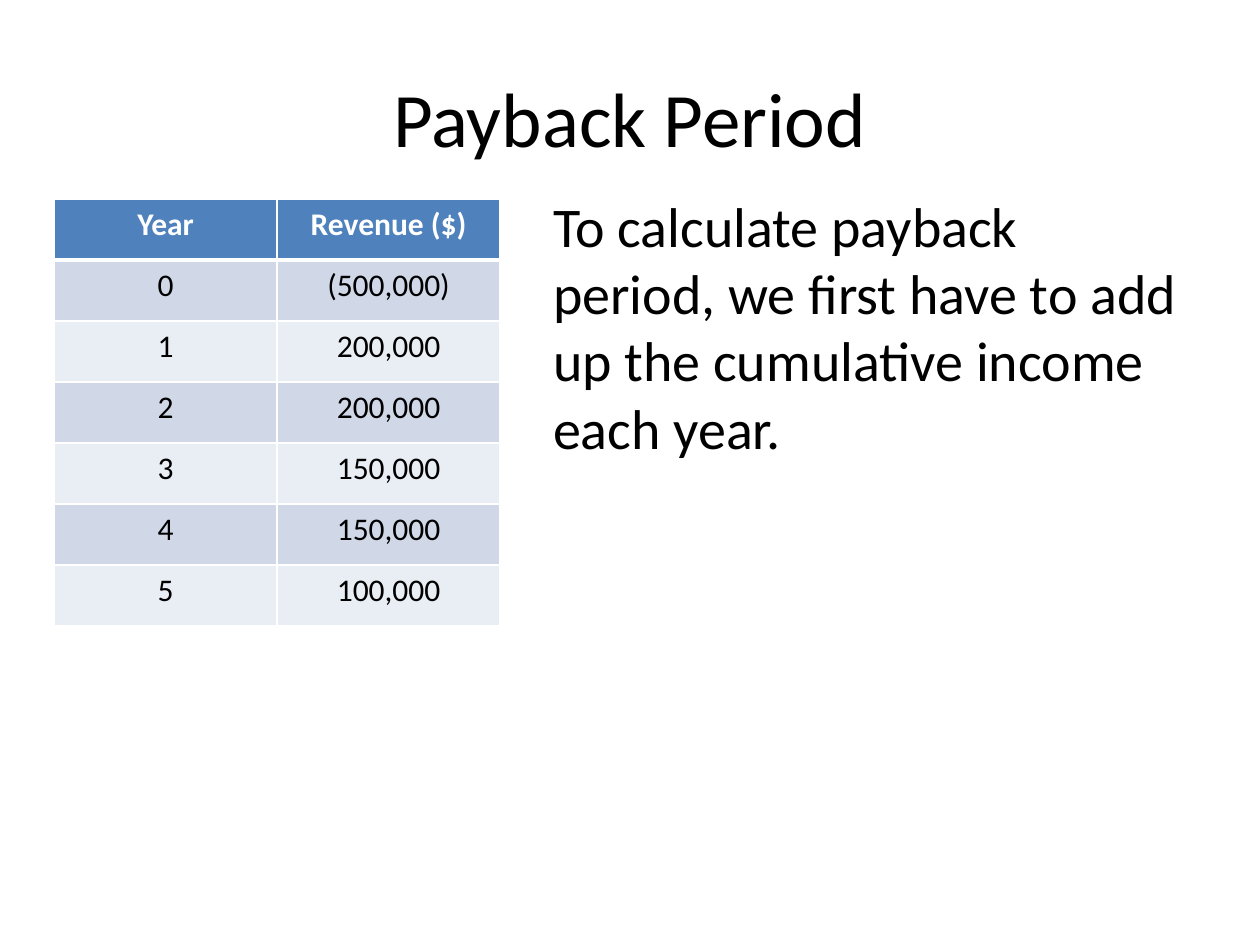
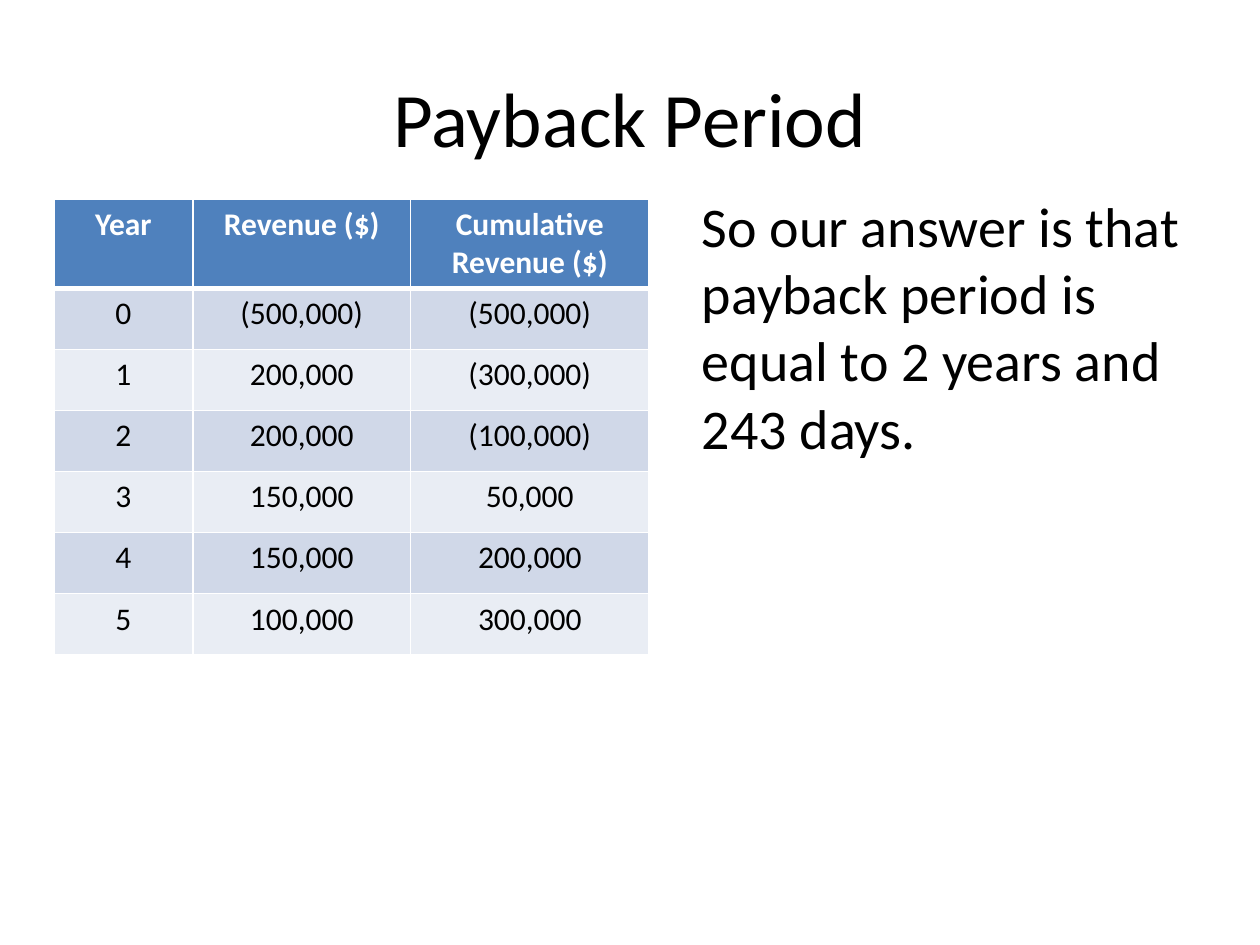
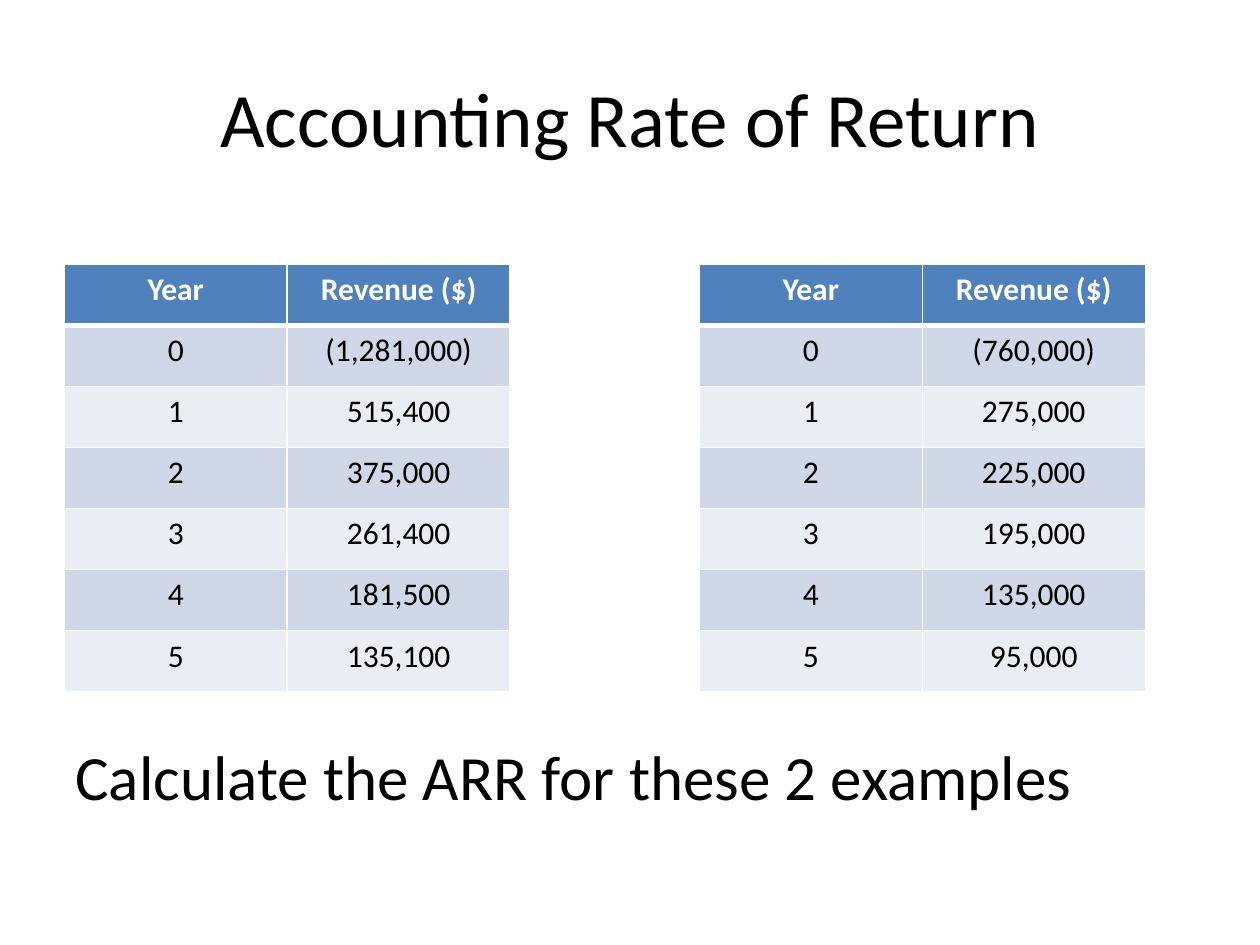
from itertools import accumulate

from lxml.etree import SubElement
from pptx import Presentation
from pptx.dml.color import RGBColor
from pptx.enum.text import MSO_ANCHOR, MSO_AUTO_SIZE, PP_ALIGN
from pptx.oxml.ns import qn
from pptx.util import Inches, Pt

FONT = "Calibri"
COLORS = {
    "text": "000000",
    "white": "FFFFFF",
    "header": "4F81BD",
    "odd_band": "D0D8E8",
    "even_band": "E9EDF4",
}
TITLE_ONLY, TITLE_AND_BODY = 5, 1
ROW_HEIGHT = Inches(3.39) // 7
EQUAL_COLUMNS = (1.77, 1.77)


def accounting(amount):
    """Thousands separators, with negative amounts in parentheses."""
    return f"({-amount:,})" if amount < 0 else f"{amount:,}"


class Deck:
    def __init__(self):
        self.presentation = Presentation()
        self.presentation.slide_width = Inches(10)
        self.presentation.slide_height = Inches(7.5)
        self.slide = None

    def add_slide(self, heading, layout):
        self.slide = self.presentation.slides.add_slide(
            self.presentation.slide_layouts[layout])
        title = self.slide.shapes.title
        self.place(title, 0.5, 0.3, 9, 1.25)
        title.text_frame.text = heading
        title.text_frame.vertical_anchor = MSO_ANCHOR.MIDDLE
        self.format_text(title.text_frame, 44, align=PP_ALIGN.CENTER)

    def place(self, shape, left, top, width, height):
        shape.left, shape.top = Inches(left), Inches(top)
        shape.width, shape.height = Inches(width), Inches(height)

    def format_text(self, frame, size, color="text", bold=False, align=None):
        for paragraph in frame.paragraphs:
            paragraph.alignment = align
            for run in paragraph.runs:
                run.font.name = FONT
                run.font.size = Pt(size)
                run.font.bold = bold
                run.font.color.rgb = RGBColor.from_string(COLORS[color])

    def add_body(self, explanation, left, width):
        body = self.slide.placeholders[1]
        self.place(body, left, 1.47, width, 5.23)
        body.text_frame.text = explanation
        self.format_text(body.text_frame, 32)
        # Plain paragraph: no bullet and no hanging indent
        properties = body.text_frame.paragraphs[0]._p.get_or_add_pPr()
        properties.set("marL", "0")
        properties.set("indent", "0")
        SubElement(properties, qn("a:buNone"))

    def add_note(self, task, left, top, width, height):
        note = self.slide.shapes.add_textbox(
            Inches(left), Inches(top), Inches(width), Inches(height))
        note.text_frame.word_wrap = True
        note.text_frame.auto_size = MSO_AUTO_SIZE.SHAPE_TO_FIT_TEXT
        note.text_frame.text = task
        self.format_text(note.text_frame, 36)

    def add_revenue_table(self, left, top, revenues, widths=EQUAL_COLUMNS,
                          cumulative=False):
        columns = [["Year", *map(str, range(len(revenues)))],
                   ["Revenue ($)", *map(accounting, revenues)]]
        if cumulative:
            columns.append(["Cumulative Revenue ($)",
                            *map(accounting, accumulate(revenues))])
        rows = list(zip(*columns))
        table = self.slide.shapes.add_table(
            len(rows), len(columns), Inches(left), Inches(top),
            Inches(sum(widths)), ROW_HEIGHT * len(rows)).table
        for column, width in zip(table.columns, widths):
            column.width = Inches(width)
        for row_index, row in enumerate(rows):
            table.rows[row_index].height = ROW_HEIGHT
            for column_index, value in enumerate(row):
                self.fill_cell(table.cell(row_index, column_index), value, row_index)

    def fill_cell(self, cell, value, row_index):
        is_header = row_index == 0
        band = "odd_band" if row_index % 2 else "even_band"
        cell.text_frame.text = value
        self.format_text(cell.text_frame, 18, "white" if is_header else "text",
                         is_header, PP_ALIGN.CENTER)
        cell.fill.solid()
        cell.fill.fore_color.rgb = RGBColor.from_string(
            COLORS["header" if is_header else band])
        # The rule below the header is thicker than the other borders
        widths = {"lnL": 1, "lnR": 1, "lnT": 3 if row_index == 1 else 1,
                  "lnB": 3 if is_header else 1}
        properties = cell._tc.get_or_add_tcPr()
        for position, (side, width) in enumerate(widths.items()):
            border = SubElement(properties, qn(f"a:{side}"), w=str(Pt(width)))
            fill = SubElement(border, qn("a:solidFill"))
            SubElement(fill, qn("a:srgbClr"), val=COLORS["white"])
            properties.insert(position, border)


def main():
    deck = Deck()
    project = [-500000, 200000, 200000, 150000, 150000, 100000]

    # Payback period: the question
    deck.add_slide("Payback Period", TITLE_AND_BODY)
    deck.add_body("To calculate payback period, we first have to add up the "
                  "cumulative income each year.", 4.29, 5.21)
    deck.add_revenue_table(0.43, 1.58, project)

    # Payback period: the answer
    deck.add_slide("Payback Period", TITLE_AND_BODY)
    deck.add_body("So our answer is that payback period is equal to 2 years "
                  "and 243 days.", 5.47, 4.03)
    deck.add_revenue_table(0.43, 1.58, project, (1.1, 1.73, 1.89), cumulative=True)

    # Accounting rate of return: two exercises
    deck.add_slide("Accounting Rate of Return", TITLE_ONLY)
    deck.add_revenue_table(
        0.51, 2.1, [-1281000, 515400, 375000, 261400, 181500, 135100])
    deck.add_revenue_table(
        5.55, 2.1, [-760000, 275000, 225000, 195000, 135000, 95000])
    deck.add_note("Calculate the ARR for these 2 examples", 0.5, 5.8, 8.75, 0.71)

    deck.presentation.save("out.pptx")


if __name__ == "__main__":
    main()
